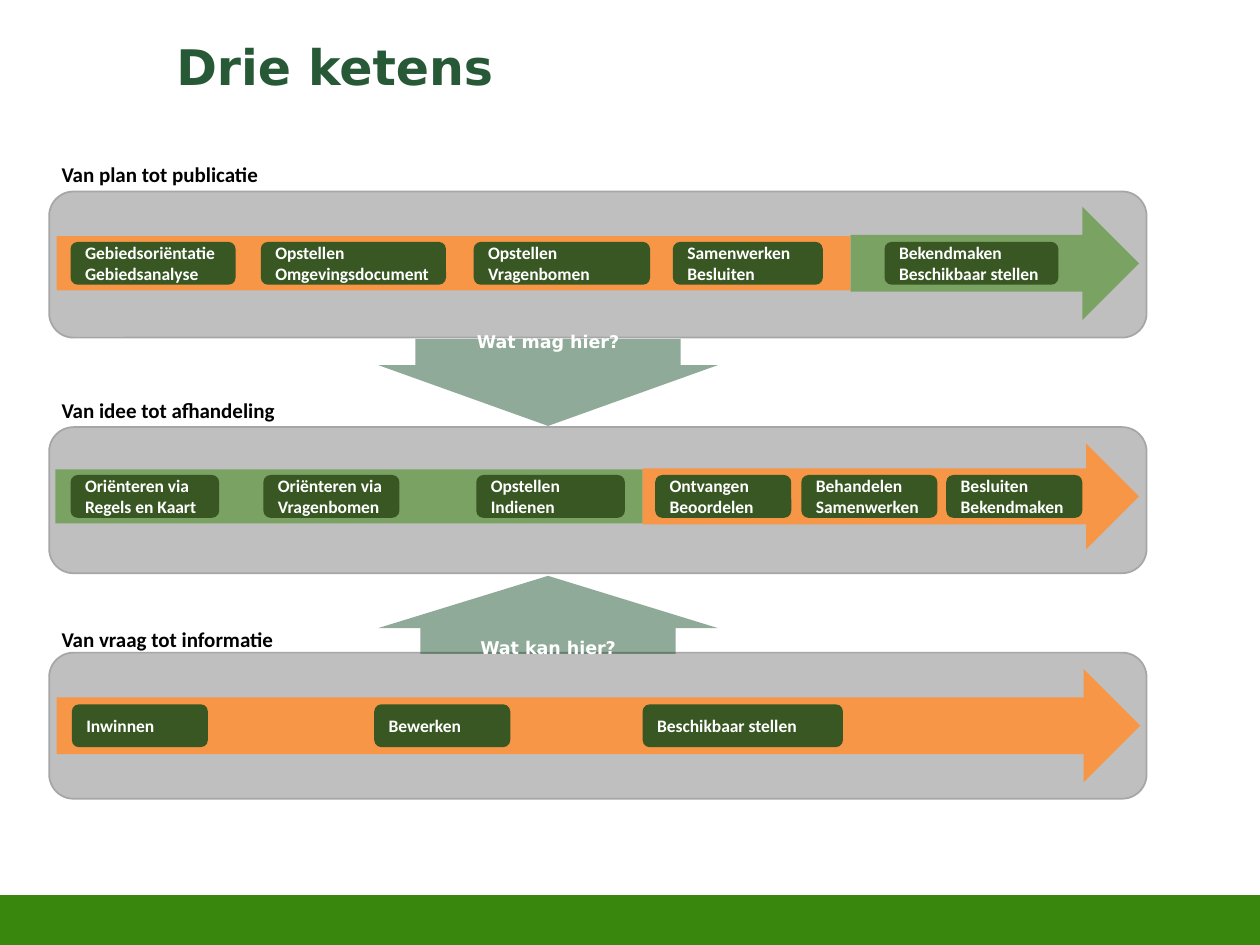
from dataclasses import dataclass
from typing import NamedTuple

from lxml.etree import SubElement
from pptx import Presentation
from pptx.dml.color import RGBColor
from pptx.enum.shapes import MSO_SHAPE
from pptx.enum.text import MSO_ANCHOR, PP_ALIGN
from pptx.oxml.ns import qn
from pptx.util import Inches, Pt

# Grid of 100 columns by 75 rows
COLS, ROWS = 100, 75
WIDTH, HEIGHT = Inches(10), Inches(7.5)

GREEN, ORANGE, DARK, TITLE = "39870C", "F79646", "385723", "275937"
PANEL, EDGE, WHITE, BLACK = "BFBFBF", "A6A6A6", "FFFFFF", "000000"
BODY_FONT, HEAD_FONT = "Calibri", "DejaVu Sans"
PANEL_LEFT, PANEL_WIDTH, PANEL_HEIGHT = 3.9, 87.1, 11.6
STEP_HEIGHT, BAR_HEIGHT = 3.4, 4.3


class Box(NamedTuple):
    left: float
    top: float
    width: float
    height: float


class Step(NamedTuple):
    left: float
    width: float
    lines: tuple[str, ...]


class Bar(NamedTuple):
    kind: MSO_SHAPE
    left: float
    width: float
    height: float
    color: str
    alpha: int = 100
    adj: tuple[float, ...] = ()


class Link(NamedTuple):
    kind: MSO_SHAPE
    box: Box
    adj: tuple[float, float]
    text: str
    margin_top: float
    margin_bottom: float


@dataclass
class Chain:
    label: str
    label_top: float
    top: float
    middle: float
    bars: list[Bar]
    steps: list[Step]


CHAINS = [
    Chain("Van plan tot publicatie", 12.3, 15.2, 20.9,
          [Bar(MSO_SHAPE.RECTANGLE, 4.5, 63, BAR_HEIGHT, ORANGE),
           Bar(MSO_SHAPE.RIGHT_ARROW, 67.5, 22.9, 9, GREEN, 51)],
          [Step(5.6, 13.1, ("Gebiedsoriëntatie", "Gebiedsanalyse")),
           Step(20.7, 14.7, ("Opstellen", "Omgevingsdocument")),
           Step(37.6, 14, ("Opstellen", "Vragenbomen")),
           Step(53.4, 11.9, ("Samenwerken", "Besluiten")),
           Step(70.2, 13.8, ("Bekendmaken", "Beschikbaar stellen"))]),
    Chain("Van idee tot afhandeling", 31.1, 33.9, 39.4,
          [Bar(MSO_SHAPE.RECTANGLE, 4.4, 46.6, BAR_HEIGHT, GREEN, 51),
           Bar(MSO_SHAPE.RIGHT_ARROW, 51, 39.4, 8.4, ORANGE, adj=(0.53, 0.5))],
          [Step(5.6, 11.8, ("Oriënteren via Regels en Kaart",)),
           Step(20.9, 10.8, ("Oriënteren via", "Vragenbomen")),
           Step(37.8, 11.8, ("Opstellen", "Indienen")),
           Step(52, 10.8, ("Ontvangen", "Beoordelen")),
           Step(63.6, 10.8, ("Behandelen", "Samenwerken")),
           Step(75.1, 10.8, ("Besluiten", "Bekendmaken"))]),
    Chain("Van vraag tot informatie", 49.2, 51.8, 57.6,
          [Bar(MSO_SHAPE.RIGHT_ARROW, 4.5, 86, 9, ORANGE)],
          [Step(5.7, 10.8, ("Inwinnen",)),
           Step(29.7, 10.8, ("Bewerken",)),
           Step(51, 15.9, ("Beschikbaar stellen",))]),
]

LINKS = [
    Link(MSO_SHAPE.DOWN_ARROW, Box(30, 26.9, 27, 6.9), (0.78, 0.7),
         "Wat mag hier?", 0, 2.7),
    Link(MSO_SHAPE.UP_ARROW, Box(30, 45.7, 27, 6.2), (0.75, 0.67),
         "Wat kan hier?", 2, 0),
]


def rgb(color: str) -> RGBColor:
    return RGBColor.from_string(color)


def col(n: float) -> int:
    return round(WIDTH * n / COLS)


def row(n: float) -> int:
    return round(HEIGHT * n / ROWS)


def place(box: Box) -> tuple[int, int, int, int]:
    return col(box.left), row(box.top), col(box.width), row(box.height)


def centred(left: float, width: float, height: float, middle: float) -> Box:
    return Box(left, middle - height / 2, width, height)


def add_shape(s, kind: MSO_SHAPE, box: Box, color: str, alpha: int = 100,
              adj: tuple[float, ...] = (), edge: str = "", weight: float = 1):
    sp = s.shapes.add_shape(kind, *place(box))
    sp.shadow.inherit = False
    sp.fill.solid()
    sp.fill.fore_color.rgb = rgb(color)
    if alpha < 100:
        clr = sp.fill._xPr.find(qn("a:solidFill"))[0]
        SubElement(clr, qn("a:alpha"), val=str(alpha * 1000))
    if edge:
        sp.line.color.rgb = rgb(edge)
        sp.line.width = Pt(weight)
    else:
        sp.line.fill.background()
    for i, value in enumerate(adj):
        sp.adjustments[i] = value
    return sp


def write(tf, lines: tuple[str, ...], size: float, font: str, color: str,
          align: PP_ALIGN = PP_ALIGN.LEFT) -> None:
    for i, line in enumerate(lines):
        p = tf.add_paragraph() if i else tf.paragraphs[0]
        p.alignment = align
        r = p.add_run()
        r.text = line
        r.font.size, r.font.name, r.font.bold = Pt(size), font, True
        r.font.color.rgb = rgb(color)


def set_frame(tf, anchor: MSO_ANCHOR, top: float, bottom: float) -> None:
    tf.word_wrap = True
    tf.vertical_anchor = anchor
    tf.margin_top, tf.margin_bottom = row(top), row(bottom)


def add_chain(s, chain: Chain) -> None:
    panel = Box(PANEL_LEFT, chain.top, PANEL_WIDTH, PANEL_HEIGHT)
    add_shape(s, MSO_SHAPE.ROUNDED_RECTANGLE, panel, PANEL, edge=EDGE)
    for bar in chain.bars:
        box = centred(bar.left, bar.width, bar.height, chain.middle)
        add_shape(s, bar.kind, box, bar.color, bar.alpha, bar.adj)
    for step in chain.steps:
        box = centred(step.left, step.width, STEP_HEIGHT, chain.middle)
        sp = add_shape(s, MSO_SHAPE.ROUNDED_RECTANGLE, box, DARK)
        set_frame(sp.text_frame, MSO_ANCHOR.MIDDLE, 0, 0)
        write(sp.text_frame, step.lines, 10, BODY_FONT, WHITE)
    label = s.shapes.add_textbox(*place(Box(PANEL_LEFT, chain.label_top, 19.3, 3)))
    set_frame(label.text_frame, MSO_ANCHOR.TOP, 0.5, 0.5)
    write(label.text_frame, (chain.label,), 12, BODY_FONT, BLACK)


def add_link(s, link: Link) -> None:
    sp = add_shape(s, link.kind, link.box, TITLE, 51, link.adj)
    set_frame(sp.text_frame, MSO_ANCHOR.MIDDLE, link.margin_top, link.margin_bottom)
    write(sp.text_frame, (link.text,), 10, HEAD_FONT, WHITE, PP_ALIGN.CENTER)


def main() -> None:
    prs = Presentation()
    prs.slide_width, prs.slide_height = WIDTH, HEIGHT
    s = prs.slides.add_slide(prs.slide_layouts[5])

    title = s.shapes.title
    title.left, title.top, title.width, title.height = place(Box(13, 2.1, 90, 7.3))
    set_frame(title.text_frame, MSO_ANCHOR.TOP, 0.8, 0.5)
    write(title.text_frame, ("Drie ketens",), 28, HEAD_FONT, TITLE)

    add_shape(s, MSO_SHAPE.RECTANGLE, Box(0, 71.2, COLS, 3.8), GREEN,
              edge=GREEN, weight=2)
    for chain in CHAINS:
        add_chain(s, chain)
    for link in LINKS:
        add_link(s, link)
    prs.save("out.pptx")


if __name__ == "__main__":
    main()
